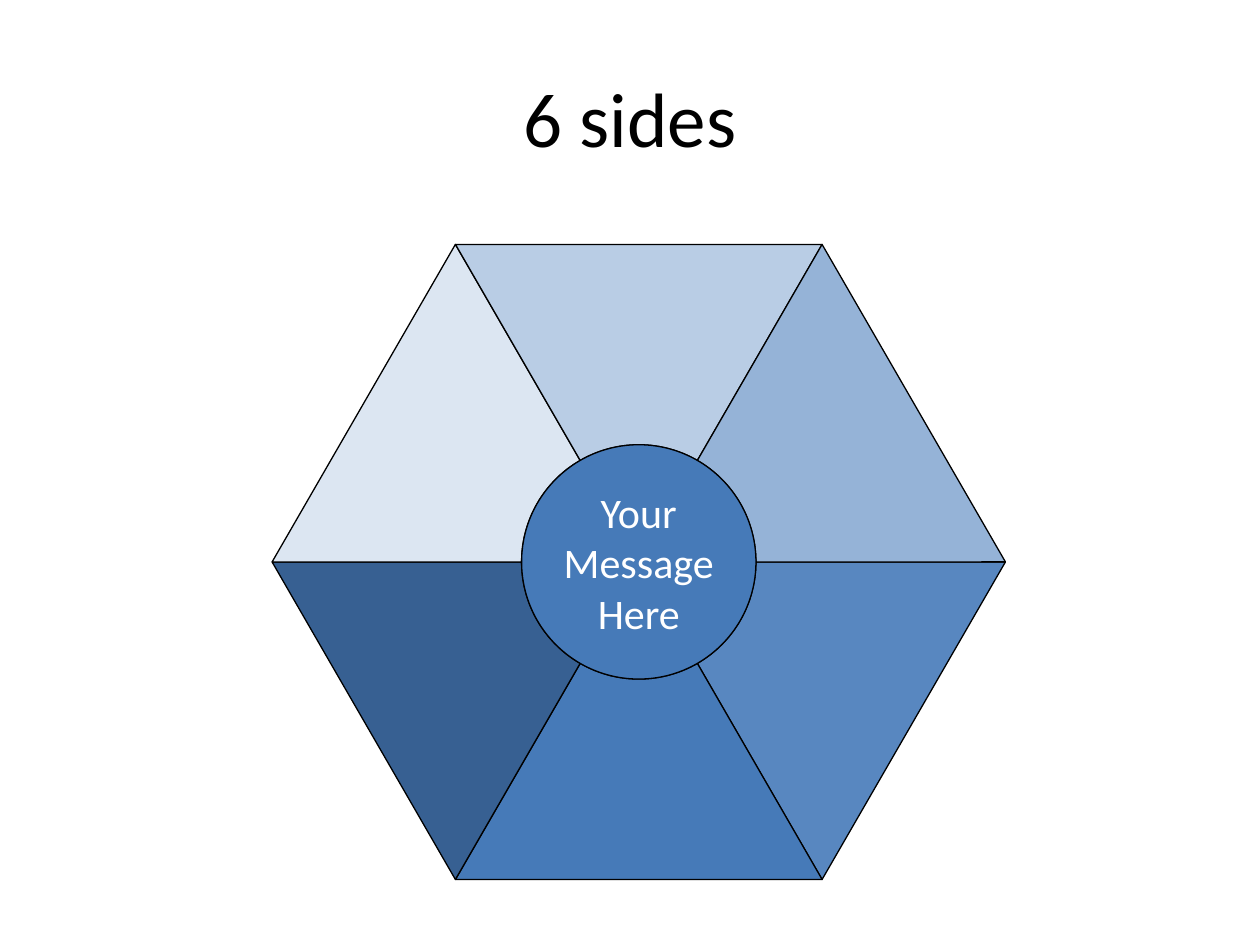
from math import cos, radians, sin

from pptx import Presentation
from pptx.dml.color import RGBColor
from pptx.enum.shapes import MSO_SHAPE
from pptx.enum.text import MSO_ANCHOR, PP_ALIGN
from pptx.util import Inches, Pt

OVAL = MSO_SHAPE.OVAL
MIDDLE = MSO_ANCHOR.MIDDLE
CENTER = PP_ALIGN.CENTER

BLACK = RGBColor(0x00, 0x00, 0x00)
WHITE = RGBColor(0xFF, 0xFF, 0xFF)
BLUE = RGBColor(0x46, 0x7A, 0xB8)
SIDE_COLORS = [
    RGBColor(0x58, 0x87, 0xC0),
    BLUE,
    RGBColor(0x37, 0x60, 0x92),
    RGBColor(0xDC, 0xE6, 0xF2),
    RGBColor(0xB9, 0xCD, 0xE5),
    RGBColor(0x95, 0xB3, 0xD7),
]

CX, CY = 5.07, 4.46
OUTER, INNER = 2.91, 0.93
STEP = 360 // len(SIDE_COLORS)


def point(radius, angle):
    a = radians(angle)
    return Inches(CX + radius * cos(a)), Inches(CY + radius * sin(a))


def paint(shape, color):
    shape.shadow.inherit = False
    shape.fill.solid()
    shape.fill.fore_color.rgb = color
    shape.line.color.rgb = BLACK
    shape.line.width = Pt(0)


prs = Presentation()
prs.slide_width, prs.slide_height = Inches(10), Inches(7.5)
s = prs.slides.add_slide(prs.slide_layouts[5])

title = s.shapes.title
title.left, title.top = Inches(0.5), Inches(0.3)
title.width, title.height = Inches(9), Inches(1.25)
title.text_frame.text = "6 sides"
title.text_frame.vertical_anchor = MIDDLE
p = title.text_frame.paragraphs[0]
p.alignment = CENTER
for name, value in {"name": "Calibri", "size": Pt(44)}.items():
    setattr(p.font, name, value)
p.font.color.rgb = BLACK

for i, color in enumerate(SIDE_COLORS):
    start, end = i * STEP, (i + 1) * STEP
    arc = [point(INNER, a) for a in range(end, start - 1, -4)]
    builder = s.shapes.build_freeform(*point(OUTER, start))
    builder.add_line_segments([point(OUTER, end)] + arc, close=True)
    paint(builder.convert_to_shape(), color)

hub = s.shapes.add_shape(OVAL, Inches(CX - INNER), Inches(CY - INNER),
                         Inches(2 * INNER), Inches(2 * INNER))
paint(hub, BLUE)
tf = hub.text_frame
frame_format = {"margin_left": 0, "margin_right": 0, "margin_top": 0,
                "margin_bottom": 0, "vertical_anchor": MIDDLE,
                "word_wrap": True}
for name, value in frame_format.items():
    setattr(tf, name, value)
tf.text = "Your\nMessage\nHere"
for p in tf.paragraphs:
    p.alignment = CENTER
    for name, value in {"name": "Calibri", "size": Pt(24)}.items():
        setattr(p.font, name, value)
    p.font.color.rgb = WHITE

prs.save("out.pptx")
